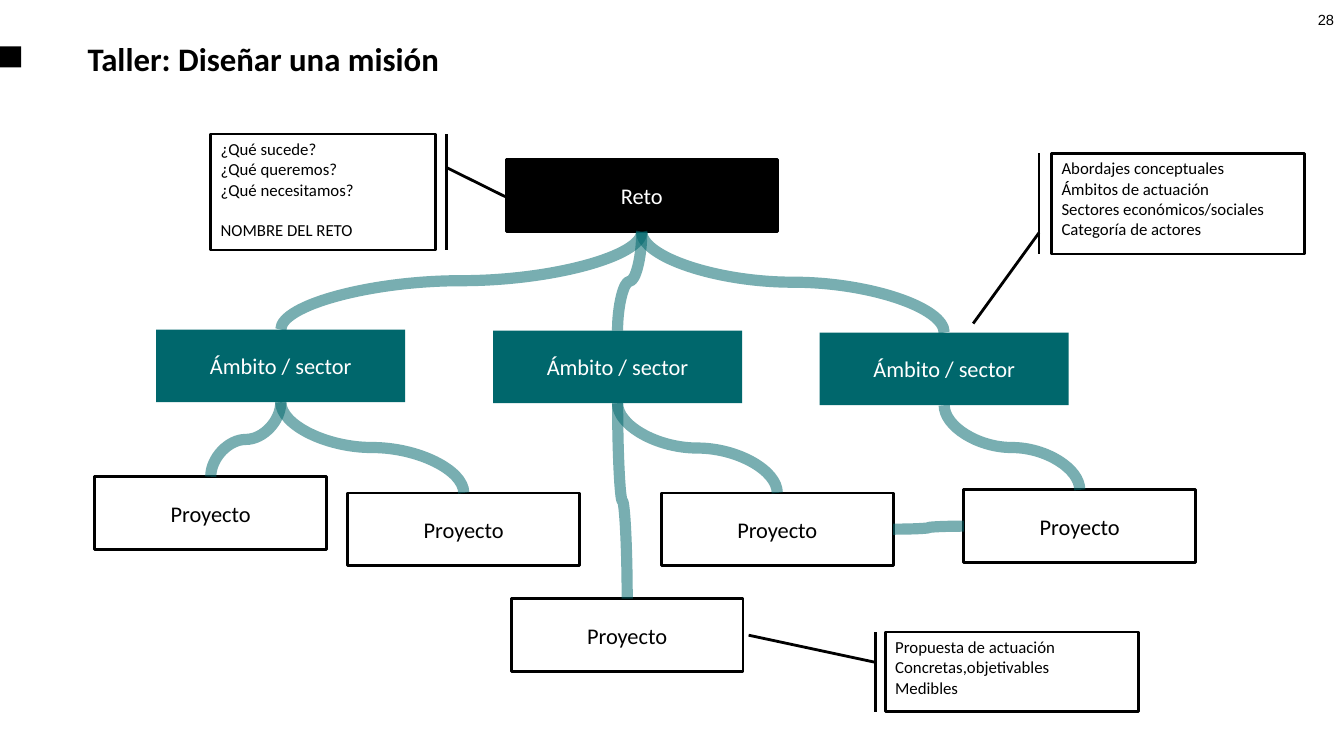
"""Build the mission design workshop slide."""
import pptx
import pptx.dml.color
import pptx.enum.shapes
import pptx.enum.text
import pptx.oxml.ns
import pptx.util
from lxml import etree

Inches = pptx.util.Inches
Pt = pptx.util.Pt
Shape = pptx.enum.shapes.MSO_SHAPE
Align = pptx.enum.text.PP_ALIGN
Anchor = pptx.enum.text.MSO_ANCHOR
qn = pptx.oxml.ns.qn

BLACK, WHITE, TEAL = "000000", "FFFFFF", "00676C"
TOP, LEFT, BOTTOM, RIGHT = range(4)


def color(value):
    """Turn a hex string into a colour."""
    return pptx.dml.color.RGBColor.from_string(value)


def add_span(para, text, size, ink, font="Calibri", bold=False):
    """Add one formatted run to a paragraph."""
    span = para.add_run()
    span.text = text
    span.font.name = font
    span.font.size = Pt(size)
    span.font.bold = bold
    span.font.color.rgb = color(ink)


def add_label(page, bounds, text, size, align=Align.LEFT, anchor=Anchor.TOP, **style):
    """Add a text box holding a single line."""
    box = page.shapes.add_textbox(*map(Inches, bounds))
    frame = box.text_frame
    frame.word_wrap = True
    frame.vertical_anchor = anchor
    para = frame.paragraphs[0]
    para.alignment = align
    add_span(para, text, size, BLACK, **style)


def add_panel(page, kind, bounds, fill, line=None):
    """Add a flat filled shape with an optional outline."""
    panel = page.shapes.add_shape(kind, *map(Inches, bounds))
    panel.shadow.inherit = False
    panel.fill.solid()
    panel.fill.fore_color.rgb = color(fill)
    if line:
        panel.line.color.rgb = color(line)
        panel.line.width = Pt(2)
    else:
        panel.line.fill.background()
    panel.text_frame.word_wrap = True
    return panel


def add_node(page, text, bounds, fill, ink, line=None):
    """Add a rectangle of the tree with its centred name."""
    node = add_panel(page, Shape.RECTANGLE, bounds, fill, line)
    node.text_frame.vertical_anchor = Anchor.MIDDLE
    para = node.text_frame.paragraphs[0]
    para.alignment = Align.CENTER
    add_span(para, text, 16, ink)
    return node


def add_sector(page, left, top):
    """Add a teal sector node."""
    return add_node(page, "Ámbito / sector", (left, top, 2.47, 0.72), TEAL, WHITE)


def add_project(page, left, top):
    """Add a white project node."""
    return add_node(page, "Proyecto", (left, top, 2.3, 0.72), WHITE, BLACK, BLACK)


def add_callout(page, bounds, pointer, lines, closing=None):
    """Add a note with an accent bar, a pointer and an optional spaced last line."""
    kind = Shape.LINE_CALLOUT_1_BORDER_AND_ACCENT_BAR
    note = add_panel(page, kind, bounds, WHITE, BLACK)
    for index, value in enumerate(pointer):
        note.adjustments[index] = value
    frame = note.text_frame
    frame.vertical_anchor = Anchor.TOP
    texts = lines + [closing] if closing else lines
    for index, text in enumerate(texts):
        para = frame.add_paragraph() if index else frame.paragraphs[0]
        para.alignment = Align.LEFT
        if text == closing:
            para.space_before = Pt(14.4)
        add_span(para, text, 12, BLACK)


def add_curve(page, start, start_side, end, end_side):
    """Join two nodes with a thick translucent curve."""
    kind = pptx.enum.shapes.MSO_CONNECTOR.CURVE
    curve = page.shapes.add_connector(kind, 0, 0, 0, 0)
    curve.begin_connect(start, start_side)
    curve.end_connect(end, end_side)
    curve.line.width = Pt(8)
    curve.line.color.rgb = color(TEAL)
    properties = curve._element.spPr
    tint = next(properties.iter(qn("a:srgbClr")))
    etree.SubElement(tint, qn("a:alpha")).set("val", "52000")
    etree.SubElement(properties, qn("a:effectLst"))
    return curve


def add_branch(page, parent, child):
    """Curve down from the bottom of a parent to the top of a child."""
    curve = add_curve(page, parent, BOTTOM, child, TOP)
    across = curve.end_x - curve.begin_x
    down = curve.end_y - curve.begin_y
    middle_x = (curve.begin_x + curve.end_x) // 2
    middle_y = (curve.begin_y + curve.end_y) // 2
    curve.width, curve.height = down, abs(across)
    curve.left = middle_x - down // 2
    curve.top = middle_y - abs(across) // 2
    frame = curve._element.spPr.find(qn("a:xfrm"))
    frame.set("rot", str((270 if across > 0 else 90) * 60000))
    frame.set("flipH", "1" if across > 0 else "0")
    frame.set("flipV", "0")


def main():
    """Compose and save the slide."""
    deck = pptx.Presentation()
    deck.slide_width, deck.slide_height = Inches(13.33), Inches(7.5)
    page = deck.slides.add_slide(deck.slide_layouts[6])

    add_panel(page, Shape.RECTANGLE, (0, 0.46, 0.21, 0.21), BLACK)
    add_label(page, (12.79, 0.06, 0.54, 0.4), "28", 10.5, Align.RIGHT, font="Arial")
    add_label(page, (0.77, 0.25, 11.81, 0.66), "Taller: Diseñar una misión", 23.4,
              anchor=Anchor.MIDDLE, bold=True)

    challenge = add_node(page, "Reto", (5.02, 1.58, 2.69, 0.72), BLACK, WHITE, BLACK)
    tree = [
        ((1.55, 3.27), [(0.94, 4.73), (3.45, 4.89)]),
        ((4.89, 3.28), [(5.07, 5.94), (6.56, 4.89)]),
        ((8.13, 3.3), [(9.56, 4.86)]),
    ]
    projects = []
    for sector_place, project_places in tree:
        sector = add_sector(page, *sector_place)
        add_branch(page, challenge, sector)
        for place in project_places:
            projects.append(add_project(page, *place))
            add_branch(page, sector, projects[-1])
    add_curve(page, projects[-1], LEFT, projects[-2], RIGHT)

    add_callout(page, (2.09, 1.33, 2.23, 1.15), (0.29, 1.05, 0.54, 1.31),
                ["¿Qué sucede?", "¿Qué queremos?", "¿Qué necesitamos?"],
                "NOMBRE DEL RETO")
    add_callout(page, (10.43, 1.52, 2.51, 1), (0.79, -0.05, 1.69, -0.31),
                ["Abordajes conceptuales", "Ámbitos de actuación",
                 "Sectores económicos/sociales", "Categoría de actores"])
    add_callout(page, (8.78, 6.27, 2.51, 0.79), (0.38, -0.04, 0.04, -0.54),
                ["Propuesta de actuación", "Concretas,objetivables", "Medibles"])

    deck.save("out.pptx")


if __name__ == "__main__":
    main()
